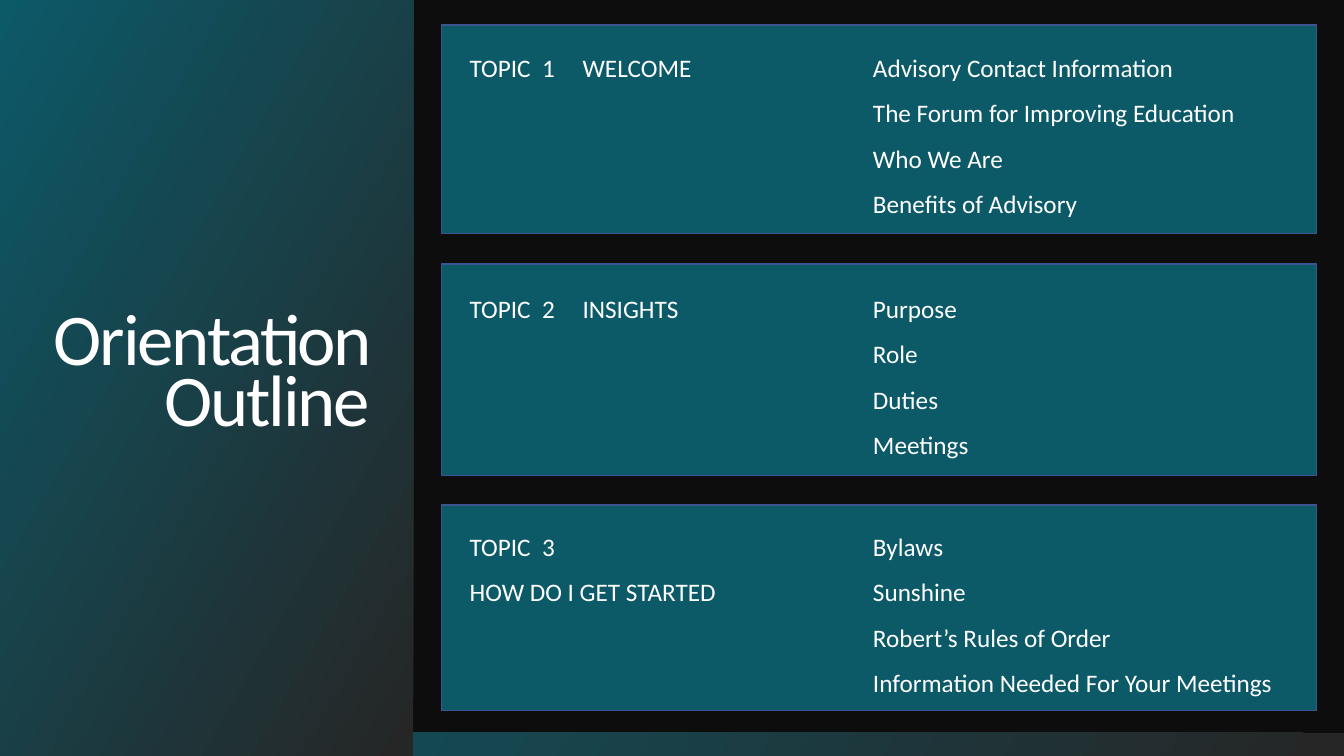
from pptx import Presentation
from pptx.dml.color import RGBColor
from pptx.enum.shapes import MSO_SHAPE as SHAPE
from pptx.enum.text import MSO_ANCHOR as ANCHOR, MSO_AUTO_SIZE as AUTO, PP_ALIGN as ALIGN
from pptx.oxml.ns import qn
from pptx.util import Inches, Pt
from lxml import etree

TEAL, DARK, BLACK, WHITE, BORDER = "0C5968", "262626", "0D0D0D", "FFFFFF", "3D5392"
TAB_STOPS = (1.12, 4.0)  # topic name, topic contents

# Panel top, panel height, text top, lines
TOPICS = [
    (0.25, 2.07, 0.32, ["TOPIC  1\tWELCOME\tAdvisory Contact Information",
                        "\t\tThe Forum for Improving Education",
                        "\t\tWho We Are",
                        "\t\tBenefits of Advisory"]),
    (2.62, 2.1, 2.71, ["TOPIC  2\tINSIGHTS\tPurpose",
                       "\t\tRole",
                       "\t\tDuties",
                       "\t\tMeetings"]),
    (5.01, 2.04, 5.07, ["TOPIC  3\t\tBylaws",
                        "HOW DO I GET STARTED\tSunshine",
                        "\t\tRobert’s Rules of Order",
                        "\t\tInformation Needed For Your Meetings"]),
]


def rgb(value):
    return RGBColor.from_string(value)


def set_attrs(obj, values):
    for name, value in values.items():
        setattr(obj, name, value)


def set_font(r, size):
    set_attrs(r.font, {"name": "Calibri", "size": Pt(size)})
    r.font.color.rgb = rgb(WHITE)


def fill_gradient(sp):
    sp.fill.gradient()
    sp.fill.gradient_angle = 150
    for stop, (position, color) in zip(sp.fill.gradient_stops, ((0.01, DARK), (1, TEAL))):
        stop.position = position
        stop.color.rgb = rgb(color)


def add_rect(s, x, y, w, h):
    sp = s.shapes.add_shape(SHAPE.RECTANGLE, Inches(x), Inches(y), Inches(w), Inches(h))
    sp.shadow.inherit = False
    return sp


def add_footer(s, x, y, w, h):
    sp = add_rect(s, x, y, w, h)
    fill_gradient(sp)
    sp.line.fill.background()


def add_title(s, x, y, w, h):
    sp = s.shapes.title
    set_attrs(sp, {"left": Inches(x), "top": Inches(y), "width": Inches(w), "height": Inches(h)})
    s.shapes._spTree.append(sp._element)  # in front of the footer
    fill_gradient(sp)
    tf = sp.text_frame
    set_attrs(tf, {"word_wrap": True, "auto_size": AUTO.NONE, "vertical_anchor": ANCHOR.MIDDLE,
                   "margin_left": Inches(0.43), "margin_right": Inches(0.43),
                   "margin_top": 0, "margin_bottom": 0})
    p = tf.paragraphs[0]
    set_attrs(p, {"alignment": ALIGN.RIGHT, "line_spacing": 0.7})
    r = p.add_run()
    r.text = "Orientation Outline"
    set_font(r, 52)
    r.font._element.set("spc", "-150")


def add_tabs(p):
    tabs = etree.SubElement(p._p.get_or_add_pPr(), qn("a:tabLst"))
    for stop in TAB_STOPS:
        etree.SubElement(tabs, qn("a:tab"), pos=str(Inches(stop)), algn="l")


def add_topic(s, x, y, w, h, text_y, lines):
    # Panel
    sp = add_rect(s, x, y, w, h)
    sp.fill.solid()
    sp.fill.fore_color.rgb = rgb(TEAL)
    sp.line.color.rgb = rgb(BORDER)
    sp.line.width = Pt(1)

    # Topic and its contents
    box = s.shapes.add_textbox(Inches(x + 0.18), Inches(text_y), Inches(w - 0.19), Inches(1.92))
    tf = box.text_frame
    set_attrs(tf, {"word_wrap": True, "auto_size": AUTO.SHAPE_TO_FIT_TEXT})
    for i, line in enumerate(lines):
        p = tf.add_paragraph() if i else tf.paragraphs[0]
        add_tabs(p)
        p.line_spacing = 1.5
        r = p.add_run()
        r.text = line
        set_font(r, 18)


def main():
    prs = Presentation()
    prs.slide_width, prs.slide_height = Inches(13.33), Inches(7.5)
    s = prs.slides.add_slide(prs.slide_layouts[5])
    s.background.fill.solid()
    s.background.fill.fore_color.rgb = rgb(BLACK)

    add_footer(s, 0, 7.27, 13.33, 0.23)
    add_title(s, 0, 0, 4.1, 7.5)
    for y, h, text_y, lines in TOPICS:
        add_topic(s, 4.38, y, 8.68, h, text_y, lines)
    prs.save("out.pptx")


if __name__ == "__main__":
    main()
